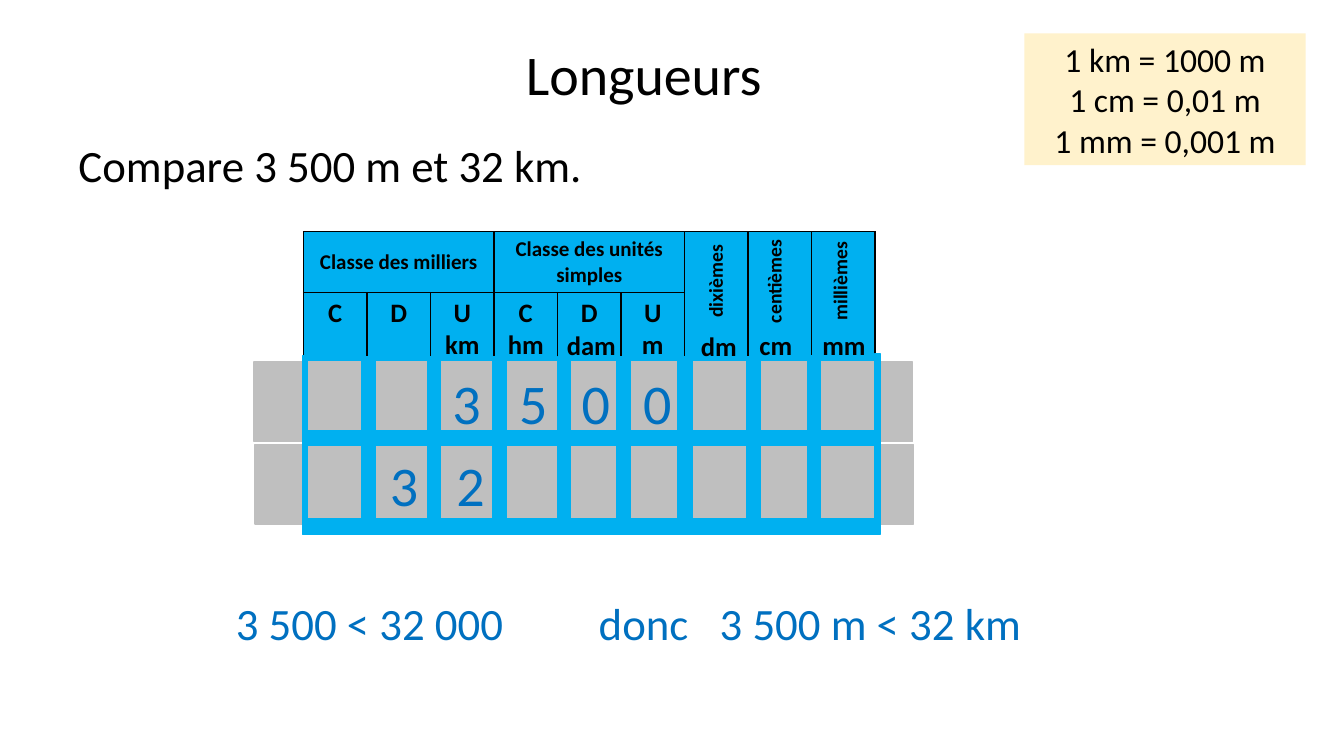
from dataclasses import dataclass
from typing import NamedTuple

from lxml import etree
from pptx import Presentation
from pptx.dml.color import RGBColor
from pptx.enum.shapes import MSO_SHAPE
from pptx.enum.text import MSO_ANCHOR, PP_ALIGN
from pptx.oxml.ns import qn
from pptx.util import Emu, Pt

RECTANGLE = MSO_SHAPE.RECTANGLE
LEFT, CENTER = PP_ALIGN.LEFT, PP_ALIGN.CENTER
TOP, MIDDLE = MSO_ANCHOR.TOP, MSO_ANCHOR.MIDDLE

PX = 9144  # EMU per px, 100 px to the inch
FONT = "Calibri"
COLORS = {
    "white": "FFFFFF",
    "black": "000000",
    "answer": "0070C0",
    "header": "00B0F0",
    "strip": "BFBFBF",
    "reminder": "FFF2CC",
}


class Box(NamedTuple):
    left: int
    top: int
    width: int
    height: int


class Tab(NamedTuple):
    position: int
    alignment: str = "ctr"


@dataclass(frozen=True)
class Label:
    text: str
    box: Box
    size: int
    color: str = "black"
    bold: bool = False
    align: PP_ALIGN = CENTER
    anchor: MSO_ANCHOR = TOP
    wrap: bool = True
    rotation: int = 0
    spacing: float = 1.0
    fill: str | None = None
    line: str | None = None
    tabs: tuple[Tab, ...] = ()


TITLE = Label("Longueurs", Box(200, 33, 877, 88), 40, anchor=MIDDLE, spacing=0.9)
QUESTION = Label("Compare 3 500 m et 32 km.", Box(68, 132, 617, 64), 32,
                 align=LEFT, fill="white")
REMINDER = Label("1 km = 1000 m\n1 cm = 0,01 m\n1 mm = 0,001 m",
                 Box(1016, 33, 279, 131), 24, anchor=MIDDLE, fill="reminder")
CONCLUSION = (
    Label("3 500 < 32 000", Box(224, 586, 301, 64), 32, "answer", align=LEFT),
    Label("donc\t3 500 m < 32 km", Box(584, 586, 460, 64), 32, "answer",
          align=LEFT, tabs=(Tab(120, "l"),)),
)
DECIMAL_NAMES = tuple(
    Label(text, box, 14, bold=True, rotation=270)
    for text, box in (
        ("dixièmes", Box(657, 262, 105, 34)),
        ("centièmes", Box(710, 262, 116, 34)),
        ("millièmes", Box(775, 262, 116, 34)),
    )
)
UNITS = tuple(
    Label(text, box, 19, bold=True, wrap=False)
    for text, box in (
        ("dm", Box(685, 322, 56, 42)),
        ("cm", Box(743, 321, 53, 42)),
        ("mm", Box(805, 321, 64, 42)),
        ("dam", Box(552, 321, 69, 42)),
    )
)


def digit_strip(digits: str, box: Box, *centers: int) -> Label:
    """Grey strip holding one digit at each tab stop."""
    return Label("".join(f"\t{digit}" for digit in digits), box, 40, "answer",
                 align=LEFT, anchor=MIDDLE, fill="strip", line="strip",
                 tabs=tuple(Tab(center) for center in centers))


METRE_STRIP = digit_strip("3500", Box(252, 359, 653, 79), 201, 267, 329, 390)
KILOMETRE_STRIP = digit_strip("32", Box(253, 441, 653, 79), 138, 204)

COLUMN_COUNT, COLUMN_WIDTH = 9, 63
TABLE_BOX = Box(301, 230, COLUMN_COUNT * COLUMN_WIDTH, 133)
ROW_HEIGHTS = (59, 74)
CLASSES = {0: "Classe des milliers", 3: "Classe des unités simples"}
RANKS = ("C", "D", "U\nkm", "C\nhm", "D", "U\nm")

GRID_TOPS = (354, 442)
GRID_BARS = (  # tops are relative to the top of the grid
    *(Box(left, 0, 13, 88) for left in (359, 424, 489, 553, 612)),
    Box(300, -1, 5, 88),
    Box(300, 73, 573, 15),
    Box(868, -3, 5, 88),
    Box(672, 0, 10, 88),
    Box(682, 0, 5, 84),
    Box(741, 0, 13, 81),
    Box(801, -1, 13, 81),
)


def rgb(name: str) -> RGBColor:
    return RGBColor.from_string(COLORS[name])


def emu(box: Box) -> list[Emu]:
    return [Emu(length * PX) for length in box]


def apply(target, formats: dict) -> None:
    for name, value in formats.items():
        setattr(target, name, value)


def write_text(frame, label: Label) -> None:
    frame.text = label.text
    for paragraph in frame.paragraphs:
        apply(paragraph, {"alignment": label.align, "line_spacing": label.spacing})
        if label.tabs:
            tab_list = etree.SubElement(paragraph._p.get_or_add_pPr(), qn("a:tabLst"))
            for tab in label.tabs:
                etree.SubElement(tab_list, qn("a:tab"),
                                 pos=str(tab.position * PX), algn=tab.alignment)
        for run in paragraph.runs:
            apply(run.font, {"name": FONT, "size": Pt(label.size), "bold": label.bold})
            run.font.color.rgb = rgb(label.color)


def add_rectangle(shapes, box: Box, fill: str, line: str | None):
    shape = shapes.add_shape(RECTANGLE, *emu(box))
    shape.shadow.inherit = False
    shape.fill.solid()
    shape.fill.fore_color.rgb = rgb(fill)
    if line:
        shape.line.color.rgb = rgb(line)
        shape.line.width = Pt(1)
    else:
        shape.line.fill.background()
    return shape


def add_label(shapes, label: Label) -> None:
    if label.fill:
        shape = add_rectangle(shapes, label.box, label.fill, label.line)
    else:
        shape = shapes.add_textbox(*emu(label.box))
    shape.rotation = label.rotation
    apply(shape.text_frame, {"word_wrap": label.wrap, "vertical_anchor": label.anchor})
    write_text(shape.text_frame, label)


def format_cell(cell) -> None:
    properties = cell._tc.get_or_add_tcPr()
    for side in ("lnL", "lnR", "lnT", "lnB"):
        border = etree.SubElement(properties, qn(f"a:{side}"), w=str(Pt(1)))
        fill = etree.SubElement(border, qn("a:solidFill"))
        etree.SubElement(fill, qn("a:srgbClr"), val=COLORS["black"])
    cell.fill.solid()
    cell.fill.fore_color.rgb = rgb("header")


def add_place_value_table(shapes) -> None:
    table = shapes.add_table(len(ROW_HEIGHTS), COLUMN_COUNT, *emu(TABLE_BOX)).table
    apply(table, {"first_row": False, "horz_banding": False})
    for column in table.columns:
        column.width = Emu(COLUMN_WIDTH * PX)
    for row, height in zip(table.rows, ROW_HEIGHTS):
        row.height = Emu(height * PX)
    for cell in table.iter_cells():
        format_cell(cell)
    for start, text in CLASSES.items():
        cell = table.cell(0, start)
        cell.merge(table.cell(0, start + 2))
        cell.vertical_anchor = MIDDLE
        write_text(cell.text_frame, Label(text, TABLE_BOX, 15, bold=True))
    for index, text in enumerate(RANKS):
        write_text(table.cell(1, index).text_frame, Label(text, TABLE_BOX, 19, bold=True))
    for index in range(len(RANKS), COLUMN_COUNT):
        table.cell(0, index).merge(table.cell(1, index))


def add_grid(shapes, top: int) -> None:
    group = shapes.add_group_shape()
    for bar in GRID_BARS:
        add_rectangle(group.shapes, bar._replace(top=top + bar.top), "header", "header")


def main() -> None:
    presentation = Presentation()
    apply(presentation, {"slide_width": Emu(1333 * PX), "slide_height": Emu(750 * PX)})
    shapes = presentation.slides.add_slide(presentation.slide_layouts[6]).shapes
    for label in (KILOMETRE_STRIP, TITLE, QUESTION, REMINDER):
        add_label(shapes, label)
    add_place_value_table(shapes)
    add_label(shapes, METRE_STRIP)
    for top in GRID_TOPS:
        add_grid(shapes, top)
    for label in (*DECIMAL_NAMES, *UNITS, *CONCLUSION):
        add_label(shapes, label)
    presentation.save("out.pptx")


if __name__ == "__main__":
    main()
